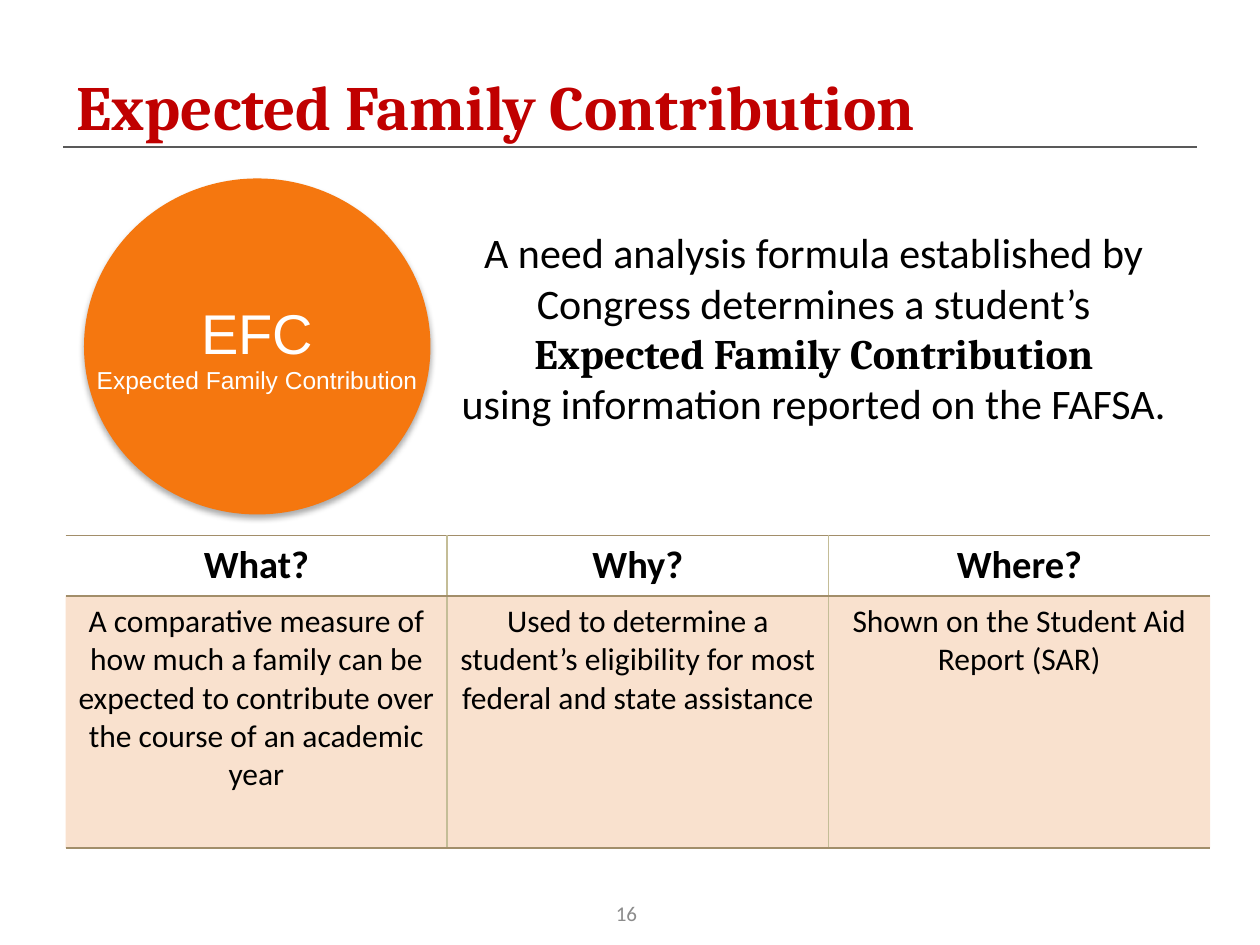
from lxml import etree
from pptx import Presentation
from pptx.dml.color import RGBColor
from pptx.enum import shapes, text
from pptx.oxml import parse_xml
from pptx.oxml.ns import nsdecls, qn
from pptx.util import Pt

BLACK, WHITE = "000000", "FFFFFF"
RULE, DIVIDER = "A28E6A", "C4BD97"
NO_STYLE = "{2D5ABB26-0587-4C30-8999-92F81FD0307C}"
COLUMNS = [
    ("What?", "A comparative measure of how much a family can be expected to "
              "contribute over the course of an academic year"),
    ("Why?", "Used to determine a student’s eligibility for most federal and "
             "state assistance"),
    ("Where?", "Shown on the Student Aid Report (SAR)"),
]


def color(value):
    return RGBColor.from_string(value)


def font_format(size, name="Calibri", fill=BLACK, bold=False):
    return {"size": Pt(size), "name": name, "bold": bold, "color": fill}


def add_run(paragraph, words, values):
    run = paragraph.add_run()
    run.text = words
    for key, value in values.items():
        if key == "color":
            run.font.color.rgb = color(value)
        else:
            setattr(run.font, key, value)


def fill_frame(frame, paragraphs, align=text.PP_ALIGN.CENTER,
               anchor=text.MSO_ANCHOR.TOP, wrap=True):
    """Each paragraph is a list of (words, font format) runs."""
    frame.word_wrap = wrap
    frame.auto_size = text.MSO_AUTO_SIZE.NONE
    frame.vertical_anchor = anchor
    for index, runs in enumerate(paragraphs):
        paragraph = frame.add_paragraph() if index else frame.paragraphs[0]
        paragraph.alignment = align
        for words, values in runs:
            if words == "\n":
                paragraph.add_line_break()
            else:
                add_run(paragraph, words, values)


def add_title(slide, words, left, top, width, height):
    title = slide.shapes.title
    box = {"left": left, "top": top, "width": width, "height": height}
    for key, value in box.items():
        setattr(title, key, Pt(value))
    fill_frame(title.text_frame,
               [[(words, font_format(36, "Cambria", "C00000", True))]],
               text.PP_ALIGN.LEFT, text.MSO_ANCHOR.MIDDLE)


def add_rule(slide, left, right, y):
    line = slide.shapes.add_connector(
        shapes.MSO_CONNECTOR.STRAIGHT, Pt(left), Pt(y), Pt(right), Pt(y))
    line.line.color.rgb = color("595959")
    line.line.width = Pt(0.75)
    etree.SubElement(line._element.spPr, qn("a:effectLst"))


def add_text(slide, box, paragraphs, **options):
    shape = slide.shapes.add_textbox(*map(Pt, box))
    fill_frame(shape.text_frame, paragraphs, **options)


def add_circle(slide, box, paragraphs):
    circle = slide.shapes.add_shape(shapes.MSO_SHAPE.OVAL, *map(Pt, box))
    circle.fill.solid()
    circle.fill.fore_color.rgb = color("F5770F")
    circle.line.fill.background()
    # Soft shadow straight below
    circle.shadow.inherit = False
    effects = circle._element.spPr.find(qn("a:effectLst"))
    effects.append(parse_xml(
        f'<a:outerShdw {nsdecls("a")} blurRad="{Pt(3.5)}" dist="{Pt(2.2)}" '
        'dir="5400000" rotWithShape="0"><a:srgbClr val="000000">'
        '<a:alpha val="32000"/></a:srgbClr></a:outerShdw>'))
    fill_frame(circle.text_frame, paragraphs,
               anchor=text.MSO_ANCHOR.MIDDLE, wrap=False)


def set_borders(cell, borders):
    """Borders map a side (L, R, T, B) to a colour, or None for no line."""
    properties = cell._tc.get_or_add_tcPr()
    for index, (side, value) in enumerate(borders.items()):
        paint = (f'<a:solidFill><a:srgbClr val="{value}"/></a:solidFill>'
                 if value else "<a:noFill/>")
        properties.insert(index, parse_xml(
            f'<a:ln{side} {nsdecls("a")} w="{Pt(1)}">{paint}</a:ln{side}>'))


def tint_cell(cell):
    cell.fill.solid()
    cell.fill.fore_color.rgb = color("E46C0A")
    for paint in cell._tc.tcPr.findall(qn("a:solidFill")):
        etree.SubElement(paint[0], qn("a:alpha")).set("val", "20000")


def add_table(slide, left, top, column_width, row_heights):
    count = len(COLUMNS)
    table = slide.shapes.add_table(
        len(row_heights), count, Pt(left), Pt(top),
        Pt(column_width * count), Pt(sum(row_heights))).table
    table.first_row = table.horz_banding = False
    table._tbl.tblPr.find(qn("a:tableStyleId")).text = NO_STYLE
    for row, height in zip(table.rows, row_heights):
        row.height = Pt(height)
    formats = [font_format(22, bold=True), font_format(18)]
    for c, entries in enumerate(COLUMNS):
        table.columns[c].width = Pt(column_width)
        for r, words in enumerate(entries):
            cell = table.cell(r, c)
            cell.vertical_anchor = text.MSO_ANCHOR.TOP
            paragraph = cell.text_frame.paragraphs[0]
            paragraph.alignment = text.PP_ALIGN.CENTER
            add_run(paragraph, words, formats[r])
            if r:
                tint_cell(cell)
            else:
                cell.fill.background()
            set_borders(cell, {"L": DIVIDER if c else None,
                               "R": DIVIDER if c < count - 1 else None,
                               "T": RULE, "B": RULE})


def main():
    presentation = Presentation()
    presentation.slide_width, presentation.slide_height = Pt(720), Pt(540)
    slide = presentation.slides.add_slide(presentation.slide_layouts[5])

    # Heading
    add_rule(slide, 36, 684, 84)
    add_title(slide, "Expected Family Contribution", 36.5, 37.5, 642, 45)

    # Definition
    plain = font_format(24)
    add_text(slide, (252, 126, 426, 144), [[
        ("A need analysis formula established by Congress determines "
         "a student’s ", plain),
        ("Expected Family Contribution", font_format(24, "Cambria", bold=True)),
        ("\n", None),
        ("using information reported on the FAFSA.", plain)]])

    # What, why and where
    add_table(slide, 37.5, 306, 218, (34.5, 144))

    # Circle with the abbreviation
    add_circle(slide, (48, 102, 198, 192), [
        [("EFC", font_format(32, "Arial", WHITE))],
        [("Expected Family Contribution", font_format(14, "Arial", WHITE))]])

    # Page number
    add_text(slide, (292, 507, 132, 30), [[("16", font_format(12, fill="8C8C8C"))]],
             anchor=text.MSO_ANCHOR.MIDDLE)

    presentation.save("out.pptx")


if __name__ == "__main__":
    main()
